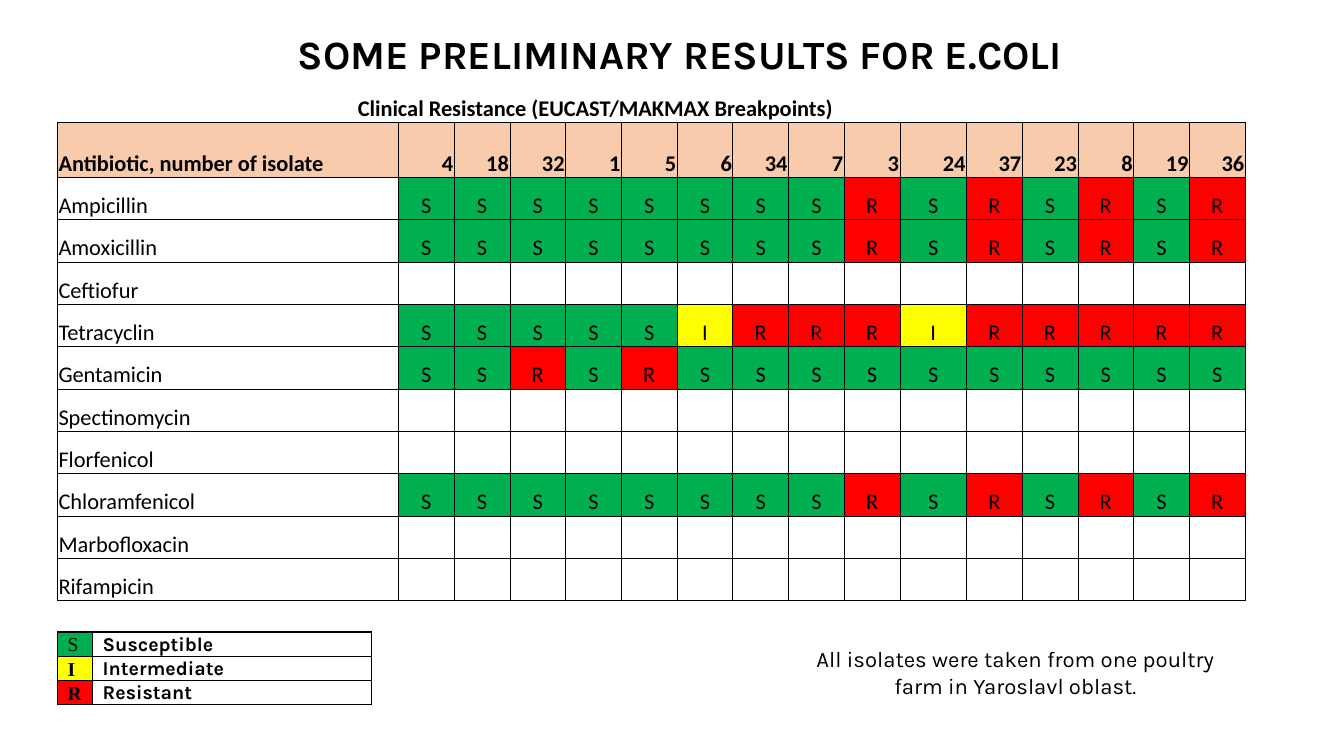
from pptx import Presentation
from pptx.dml.color import RGBColor
from pptx.enum.text import MSO_ANCHOR as Anchor, MSO_AUTO_SIZE as Fit, PP_ALIGN as Align
from pptx.oxml import parse_xml
from pptx.oxml.ns import nsdecls
from pptx.util import Inches, Pt

WIDE, HIGH = Inches(13.33), Inches(7.5)
BLACK, WHITE, PEACH = "000000", "FFFFFF", "F8CBAD"
FILLS = {"S": "00B050", "I": "FFFF00", "R": "FF0000"}
NAMES = {"S": "Susceptible", "I": "Intermediate", "R": "Resistant"}
CODES = [4, 18, 32, 1, 5, 6, 34, 7, 3, 24, 37, 23, 8, 19, 36]
BROAD = CODES.index(24)
MIXED = "SSSSSSSSRSRSRSR"
DRUGS = {
    "Ampicillin": MIXED,
    "Amoxicillin": MIXED,
    "Ceftiofur": "",
    "Tetracyclin": "SSSSSIRRRIRRRRR",
    "Gentamicin": "SSRSRSSSSSSSSSS",
    "Spectinomycin": "",
    "Florfenicol": "",
    "Chloramfenicol": MIXED,
    "Marbofloxacin": "",
    "Rifampicin": "",
}


def color(code):
    """Turn a hex string into a colour."""
    return RGBColor.from_string(code)


def area(left, top, width, height):
    """Turn percentages of the slide into a box."""
    return [int(size * part / 100) for size, part in
            zip((WIDE, HIGH, WIDE, HIGH), (left, top, width, height))]


def write(frame, text, size, face, bold=False, align=Align.LEFT):
    """Put one styled paragraph in a text frame."""
    para = frame.paragraphs[0]
    para.text = text
    para.alignment = align
    font = para.font
    font.size, font.name, font.bold = Pt(size), face, bold
    font.color.rgb = color(BLACK)


def place(shape, box, text, size, bold=False):
    """Fit a centred text shape to its box."""
    shape.left, shape.top, shape.width, shape.height = box
    frame = shape.text_frame
    frame.word_wrap = True
    frame.auto_size = Fit.NONE
    frame.vertical_anchor = Anchor.TOP
    frame.margin_left = frame.margin_right = Inches(0.12)
    frame.margin_top = frame.margin_bottom = Inches(0.06)
    write(frame, text, size, "Karla", bold, Align.CENTER)


def edge(cell, width, sides="LRTB"):
    """Rule the chosen sides of a cell and clear the others."""
    props = cell._tc.get_or_add_tcPr()
    for side in "LRTB":
        ink = (f'<a:solidFill><a:srgbClr val="{BLACK}"/></a:solidFill>'
               if side in sides else "<a:noFill/>")
        props.append(parse_xml(
            f'<a:ln{side} {nsdecls("a")} w="{Pt(width)}">{ink}</a:ln{side}>'))


def pad(cell, side, top):
    """Set the margins of a cell and seat its text at the bottom."""
    cell.margin_left = cell.margin_right = Inches(side)
    cell.margin_top, cell.margin_bottom = Inches(top), 0
    cell.vertical_anchor = Anchor.BOTTOM


def paint(cell, code):
    """Fill a cell with one colour."""
    cell.fill.solid()
    cell.fill.fore_color.rgb = color(code)


def grid(slide, box, cols, rows):
    """Add a plain table whose columns and rows are percentages of its box."""
    table = slide.shapes.add_table(len(rows), len(cols), *box).table
    table.first_row = table.horz_banding = False
    for col, part in zip(table.columns, cols):
        col.width = int(box[2] * part / 100)
    for row, part in zip(table.rows, rows):
        row.height = int(box[3] * part / 100)
    return table


def results(slide, box):
    """Draw the resistance table with its caption row."""
    name, broad, top, head = 28.7, 5.6, 7.35, 10.6
    cols = [name] + [(100 - name - broad) / (len(CODES) - 1)] * len(CODES)
    cols[BROAD + 1] = broad
    rows = [top, head] + [(100 - top - head) / len(DRUGS)] * len(DRUGS)
    table = grid(slide, box, cols, rows)

    caption = table.cell(0, 0)
    caption.merge(table.cell(0, len(CODES)))
    for col in range(len(cols)):
        cell = table.cell(0, col)
        edge(cell, 0.5, "B")
        cell.fill.background()
        pad(cell, 0.01, 0.01)
    frame = caption.text_frame
    indent = int(box[2] * 0.252)
    frame.paragraphs[0]._p.get_or_add_pPr().set("marL", str(indent))
    write(frame, "Clinical Resistance (EUCAST/MAKMAX Breakpoints)",
          16, "Calibri", True)

    lines = [["Antibiotic, number of isolate", *map(str, CODES)]]
    lines += [[drug, *marks.ljust(len(CODES))] for drug, marks in DRUGS.items()]
    for row, line in enumerate(lines, 1):
        first = row == 1
        for col, text in enumerate(line):
            cell = table.cell(row, col)
            edge(cell, 0.5)
            pad(cell, 0.01, 0.01)
            paint(cell, PEACH if first else FILLS.get(text, WHITE))
            align = Align.LEFT if col == 0 else Align.RIGHT if first else Align.CENTER
            write(cell.text_frame, text.strip(), 16, "Calibri", first, align)


def legend(slide, box):
    """Draw the key to the letters."""
    table = grid(slide, box, [11.2, 88.8], [100 / len(NAMES)] * len(NAMES))
    for row, (mark, name) in enumerate(NAMES.items()):
        looks = [(mark, "Times New Roman", FILLS[mark], mark != "S"),
                 (name, "Karla", WHITE, True)]
        for col, (text, face, code, bold) in enumerate(looks):
            cell = table.cell(row, col)
            edge(cell, 1)
            pad(cell, 0.1, 0)
            paint(cell, code)
            write(cell.text_frame, text, 14, face, bold)


def main():
    """Build and save the slide."""
    deck = Presentation()
    deck.slide_width, deck.slide_height = WIDE, HIGH
    slide = deck.slides.add_slide(deck.slide_layouts[5])
    legend(slide, area(4.28, 83.6, 23.35, 9.6))
    note = area(58.51, 84.6, 34.13, 8.67)
    place(slide.shapes.add_textbox(*note), note,
          "All isolates were taken from one poultry farm in Yaroslavl oblast.", 15.8)
    place(slide.shapes.title, area(7.73, 3.13, 85.67, 8),
          "SOME PRELIMINARY RESULTS FOR E.COLI", 28.6, True)
    results(slide, area(4.28, 11.2, 88.37, 68.27))
    deck.save("out.pptx")


if __name__ == "__main__":
    main()
